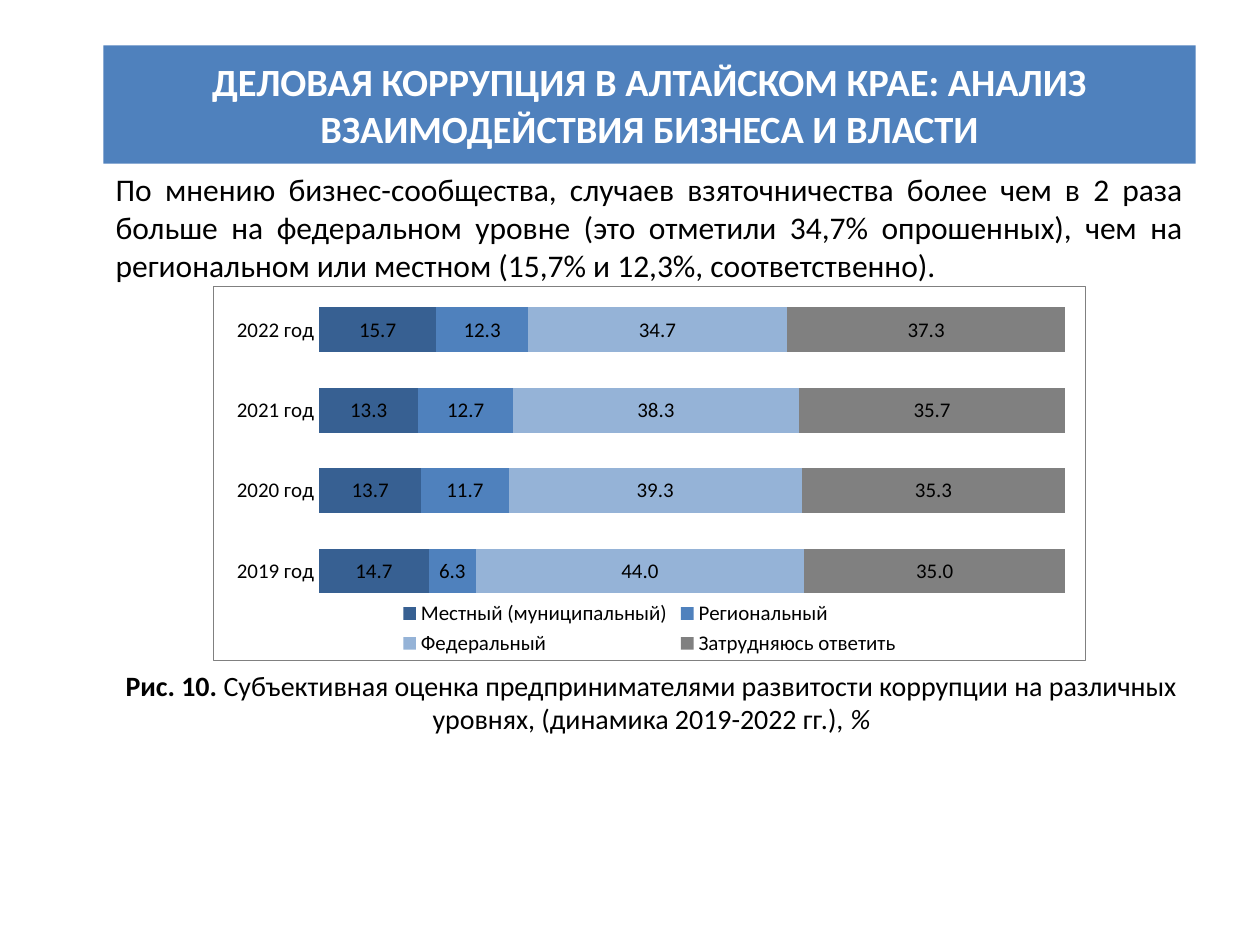
from dataclasses import dataclass

import lxml.etree
import pptx
import pptx.chart.data
import pptx.dml.color
import pptx.enum.chart
import pptx.enum.shapes
import pptx.enum.text
import pptx.oxml
import pptx.oxml.ns
import pptx.util

RGB = pptx.dml.color.RGBColor
ALIGN = pptx.enum.text.PP_ALIGN
ANCHOR = pptx.enum.text.MSO_ANCHOR
BLACK = RGB(0, 0, 0)
WHITE = RGB(255, 255, 255)
NAVY = RGB(0x37, 0x60, 0x92)
BLUE = RGB(0x4F, 0x81, 0xBD)
LIGHT_BLUE = RGB(0x95, 0xB3, 0xD7)
GRAY = RGB(0x80, 0x80, 0x80)

FONT = "Calibri"
NUMBER_FORMAT = "####.0"
WIDTH = pptx.util.Inches(10)
HEIGHT = pptx.util.Inches(7.5)


@dataclass(frozen=True)
class Area:
    left: float
    top: float
    width: float
    height: float

    def lengths(self) -> tuple[int, int, int, int]:
        return (
            round(self.left / 10 * WIDTH),
            round(self.top / 7.5 * HEIGHT),
            round(self.width / 10 * WIDTH),
            round(self.height / 7.5 * HEIGHT),
        )


@dataclass(frozen=True)
class Piece:
    text: str
    bold: bool = False
    italic: bool = False


@dataclass(frozen=True)
class Block:
    area: Area
    pieces: tuple[Piece, ...]
    size: int
    align: int
    anchor: int
    color: RGB = BLACK
    fill: RGB | None = None


@dataclass(frozen=True)
class Level:
    name: str
    values: tuple[float, ...]
    color: RGB


BLOCKS = (
    Block(
        Area(0.82, 1.3, 8.67, 0.95),
        (Piece(
            "По мнению бизнес-сообщества, случаев взяточничества более чем в 2 раза "
            "больше на федеральном уровне (это отметили 34,7% опрошенных), чем на "
            "региональном или местном (15,7% и 12,3%, соответственно)."
        ),),
        18, ALIGN.JUSTIFY, ANCHOR.TOP,
    ),
    Block(
        Area(0.84, 5.25, 8.66, 0.64),
        (
            Piece("Рис. 10. ", bold=True),
            Piece(
                "Субъективная оценка предпринимателями развитости коррупции на "
                "различных уровнях, (динамика 2019-2022 гг.), "
            ),
            Piece("%", italic=True),
        ),
        16, ALIGN.CENTER, ANCHOR.MIDDLE,
    ),
    Block(
        Area(0.82, 0.36, 8.67, 0.94),
        (Piece(
            "ДЕЛОВАЯ КОРРУПЦИЯ В АЛТАЙСКОМ КРАЕ: АНАЛИЗ ВЗАИМОДЕЙСТВИЯ БИЗНЕСА И ВЛАСТИ",
            bold=True,
        ),),
        22, ALIGN.CENTER, ANCHOR.MIDDLE, WHITE, BLUE,
    ),
)

CHART_AREA = Area(1.69, 2.27, 6.93, 2.98)
PLOT = {"x": 0.121, "y": 0.008, "w": 0.856, "h": 0.86}
YEARS = [f"{year} год" for year in range(2022, 2018, -1)]
LEVELS = (
    Level("Местный (муниципальный)", (15.7, 13.3, 13.7, 14.7), NAVY),
    Level("Региональный", (12.3, 12.7, 11.7, 6.3), BLUE),
    Level("Федеральный", (34.7, 38.3, 39.3, 44), LIGHT_BLUE),
    Level("Затрудняюсь ответить", (37.3, 35.7, 35.3, 35), GRAY),
)


def style_font(font, size: int, color: RGB) -> None:
    font.name = FONT
    font.size = pptx.util.Pt(size)
    font.color.rgb = color


def add_block(s, block: Block) -> None:
    if block.fill is None:
        sp = s.shapes.add_textbox(*block.area.lengths())
    else:
        sp = s.shapes.add_shape(
            pptx.enum.shapes.MSO_SHAPE.RECTANGLE, *block.area.lengths()
        )
        sp.shadow.inherit = False
        sp.fill.solid()
        sp.fill.fore_color.rgb = block.fill
        sp.line.fill.background()
    tf = sp.text_frame
    tf.word_wrap = True
    tf.vertical_anchor = block.anchor
    p = tf.paragraphs[0]
    p.alignment = block.align
    for piece in block.pieces:
        r = p.add_run()
        r.text = piece.text
        style_font(r.font, block.size, block.color)
        r.font.bold = piece.bold
        r.font.italic = piece.italic


def place_plot(chart) -> None:
    qn = pptx.oxml.ns.qn
    plot_area = chart.element.chart.plotArea
    for old in plot_area.findall(qn("c:layout")):
        plot_area.remove(old)
    layout = lxml.etree.Element(qn("c:layout"))
    manual = lxml.etree.SubElement(layout, qn("c:manualLayout"))
    settings = {"layoutTarget": "inner", "xMode": "edge", "yMode": "edge", **PLOT}
    for tag, value in settings.items():
        lxml.etree.SubElement(manual, qn(f"c:{tag}")).set("val", str(value))
    plot_area.insert(0, layout)


def frame_chart(chart) -> None:
    chart.element.chart.addnext(pptx.oxml.parse_xml(
        f'<c:spPr {pptx.oxml.ns.nsdecls("c", "a")}>'
        f'<a:solidFill><a:srgbClr val="{WHITE}"/></a:solidFill>'
        f'<a:ln w="{pptx.util.Pt(0.75)}"><a:solidFill><a:srgbClr val="{GRAY}"/>'
        "</a:solidFill></a:ln></c:spPr>"
    ))


def add_levels_chart(s) -> None:
    data = pptx.chart.data.CategoryChartData(number_format=NUMBER_FORMAT)
    data.categories = YEARS
    for level in LEVELS:
        data.add_series(level.name, level.values)
    chart = s.shapes.add_chart(
        pptx.enum.chart.XL_CHART_TYPE.BAR_STACKED_100, *CHART_AREA.lengths(), data
    ).chart
    style_font(chart.font, 12, BLACK)
    chart.has_title = False
    chart.has_legend = True
    chart.legend.position = pptx.enum.chart.XL_LEGEND_POSITION.BOTTOM
    chart.legend.include_in_layout = False
    style_font(chart.legend.font, 12, BLACK)

    years = chart.category_axis
    years.reverse_order = True
    years.major_tick_mark = pptx.enum.chart.XL_TICK_MARK.NONE
    years.format.line.fill.background()
    style_font(years.tick_labels.font, 12, BLACK)
    chart.value_axis.visible = False
    chart.value_axis.has_major_gridlines = False

    plot = chart.plots[0]
    plot.gap_width = 80
    plot.overlap = 100
    plot.vary_by_categories = False
    for series, level in zip(plot.series, LEVELS):
        series.format.fill.solid()
        series.format.fill.fore_color.rgb = level.color
        labels = series.data_labels
        labels.show_value = True
        labels.number_format = NUMBER_FORMAT
        labels.number_format_is_linked = False
        style_font(labels.font, 12, BLACK)
    place_plot(chart)
    frame_chart(chart)


def main() -> None:
    prs = pptx.Presentation()
    prs.slide_width = WIDTH
    prs.slide_height = HEIGHT
    s = prs.slides.add_slide(prs.slide_layouts[6])
    for block in BLOCKS:
        add_block(s, block)
    add_levels_chart(s)
    prs.save("out.pptx")


if __name__ == "__main__":
    main()
